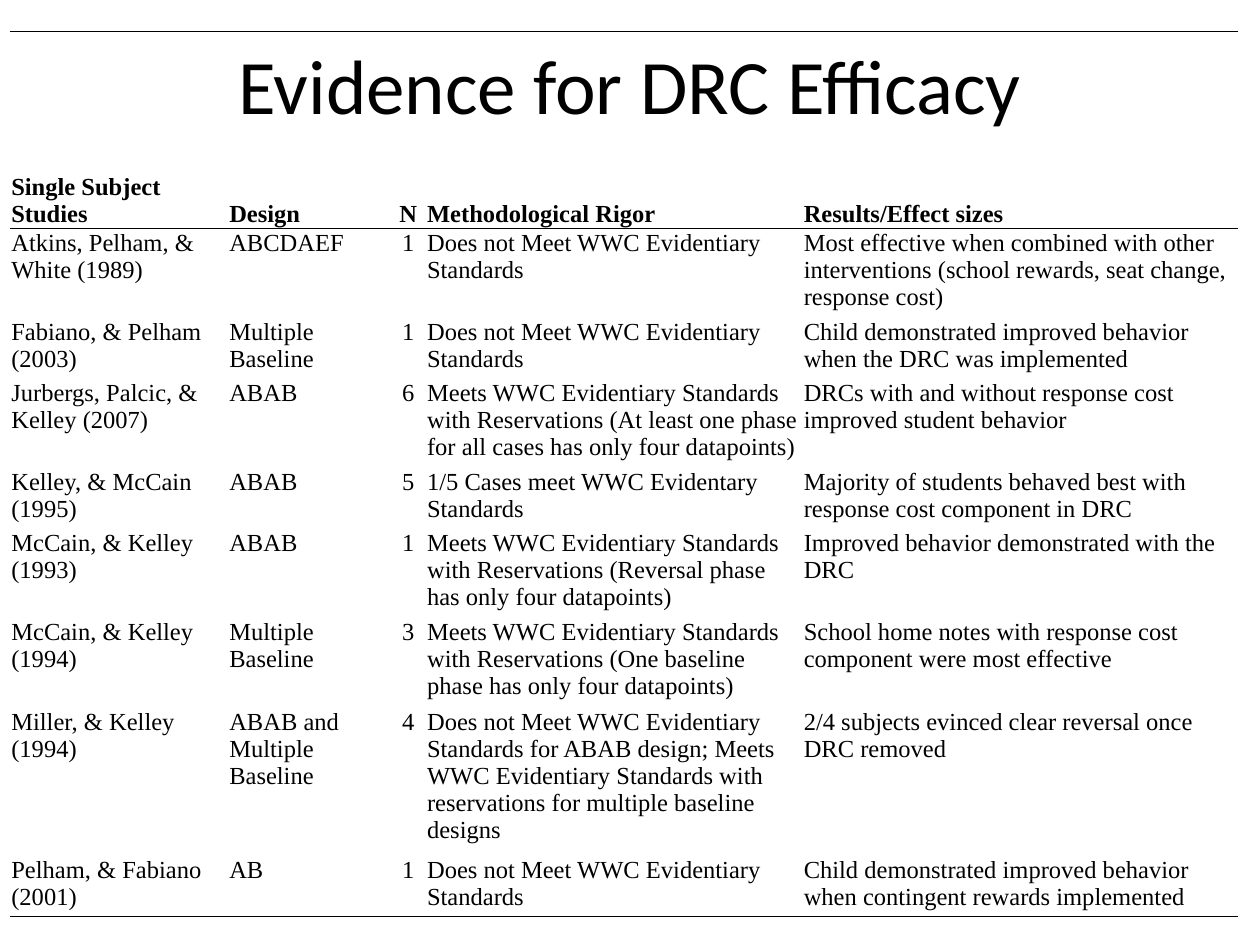
from lxml.etree import SubElement
from pptx import Presentation
from pptx.dml.color import RGBColor
from pptx.enum.text import MSO_ANCHOR, PP_ALIGN
from pptx.oxml.ns import qn
from pptx.util import Inches, Pt

BLACK = "000000"
COLUMN_WIDTHS = [1.73, 1.29, 0.28, 2.99, 3.46]
ROW_HEIGHTS = [1.56, 0.71, 0.48, 0.71, 0.48, 0.71, 0.71, 1.18, 0.48]
COUNT_COLUMN = 2
STUDIES = [
    ("Single Subject Studies", "Design", "N", "Methodological Rigor",
     "Results/Effect sizes"),
    ("Atkins, Pelham, & White (1989)", "ABCDAEF", "1",
     "Does not Meet WWC Evidentiary Standards",
     "Most effective when combined with other interventions "
     "(school rewards, seat change, response cost)"),
    ("Fabiano, & Pelham (2003)", "Multiple Baseline", "1",
     "Does not Meet WWC Evidentiary Standards",
     "Child demonstrated improved behavior when the DRC was implemented"),
    ("Jurbergs, Palcic, & Kelley (2007)", "ABAB", "6",
     "Meets WWC Evidentiary Standards with Reservations "
     "(At least one phase for all cases has only four datapoints)",
     "DRCs with and without response cost improved student behavior"),
    ("Kelley, & McCain (1995)", "ABAB", "5",
     "1/5 Cases meet WWC Evidentary Standards",
     "Majority of students behaved best with response cost component in DRC"),
    ("McCain, & Kelley (1993)", "ABAB", "1",
     "Meets WWC Evidentiary Standards with Reservations "
     "(Reversal phase has only four datapoints)",
     "Improved behavior demonstrated with the DRC"),
    ("McCain, & Kelley (1994)", "Multiple Baseline", "3",
     "Meets WWC Evidentiary Standards with Reservations "
     "(One baseline phase has only four datapoints)",
     "School home notes with response cost component were most effective"),
    ("Miller, & Kelley (1994)", "ABAB and Multiple Baseline", "4",
     "Does not Meet WWC Evidentiary Standards for ABAB design; "
     "Meets WWC Evidentiary Standards with reservations for multiple baseline designs",
     "2/4 subjects evinced clear reversal once DRC removed"),
    ("Pelham, & Fabiano (2001)", "AB", "1",
     "Does not Meet WWC Evidentiary Standards",
     "Child demonstrated improved behavior when contingent rewards implemented"),
]


def set_font(paragraph, name, size, bold=False):
    paragraph.font.name = name
    paragraph.font.size = Pt(size)
    paragraph.font.bold = bold
    paragraph.font.color.rgb = RGBColor.from_string(BLACK)


def set_borders(cell, ruled_sides):
    """Rule the given sides (T, B) in black and clear the other sides."""
    properties = cell._tc.get_or_add_tcPr()
    for side in "LRTB":
        line = SubElement(properties, qn(f"a:ln{side}"))
        if side in ruled_sides:
            line.set("w", str(Pt(0.5)))
            fill = SubElement(line, qn("a:solidFill"))
            SubElement(fill, qn("a:srgbClr")).set("val", BLACK)
        else:
            SubElement(line, qn("a:noFill"))


presentation = Presentation()
presentation.slide_width = Inches(10)
presentation.slide_height = Inches(7.5)
slide = presentation.slides.add_slide(presentation.slide_layouts[6])

title = slide.shapes.add_textbox(Inches(0.75), Inches(0.04), Inches(8.5), Inches(1.25))
title.text_frame.word_wrap = True
title.text_frame.vertical_anchor = MSO_ANCHOR.MIDDLE
paragraph = title.text_frame.paragraphs[0]
paragraph.text = "Evidence for DRC Efficacy"
paragraph.alignment = PP_ALIGN.CENTER
set_font(paragraph, "Calibri", 44)

table = slide.shapes.add_table(
    len(STUDIES), len(COLUMN_WIDTHS),
    Inches(0.08), Inches(0.25), Inches(9.75), Inches(7.02)).table
table.horz_banding = False
for column, width in zip(table.columns, COLUMN_WIDTHS):
    column.width = Inches(width)
for row, height in zip(table.rows, ROW_HEIGHTS):
    row.height = Inches(height)

ruled_sides = {0: "TB", 1: "T", len(STUDIES) - 1: "B"}
for row_index, study in enumerate(STUDIES):
    is_header = row_index == 0
    for column_index, text in enumerate(study):
        cell = table.cell(row_index, column_index)
        set_borders(cell, ruled_sides.get(row_index, ""))
        cell.fill.background()
        cell.margin_left = cell.margin_right = cell.margin_top = Inches(0.01)
        cell.margin_bottom = 0
        cell.vertical_anchor = MSO_ANCHOR.BOTTOM if is_header else MSO_ANCHOR.TOP
        paragraph = cell.text_frame.paragraphs[0]
        paragraph.text = text
        is_count = column_index == COUNT_COLUMN
        paragraph.alignment = PP_ALIGN.CENTER if is_count else PP_ALIGN.LEFT
        set_font(paragraph, "Times New Roman", 14, bold=is_header)

presentation.save("out.pptx")
